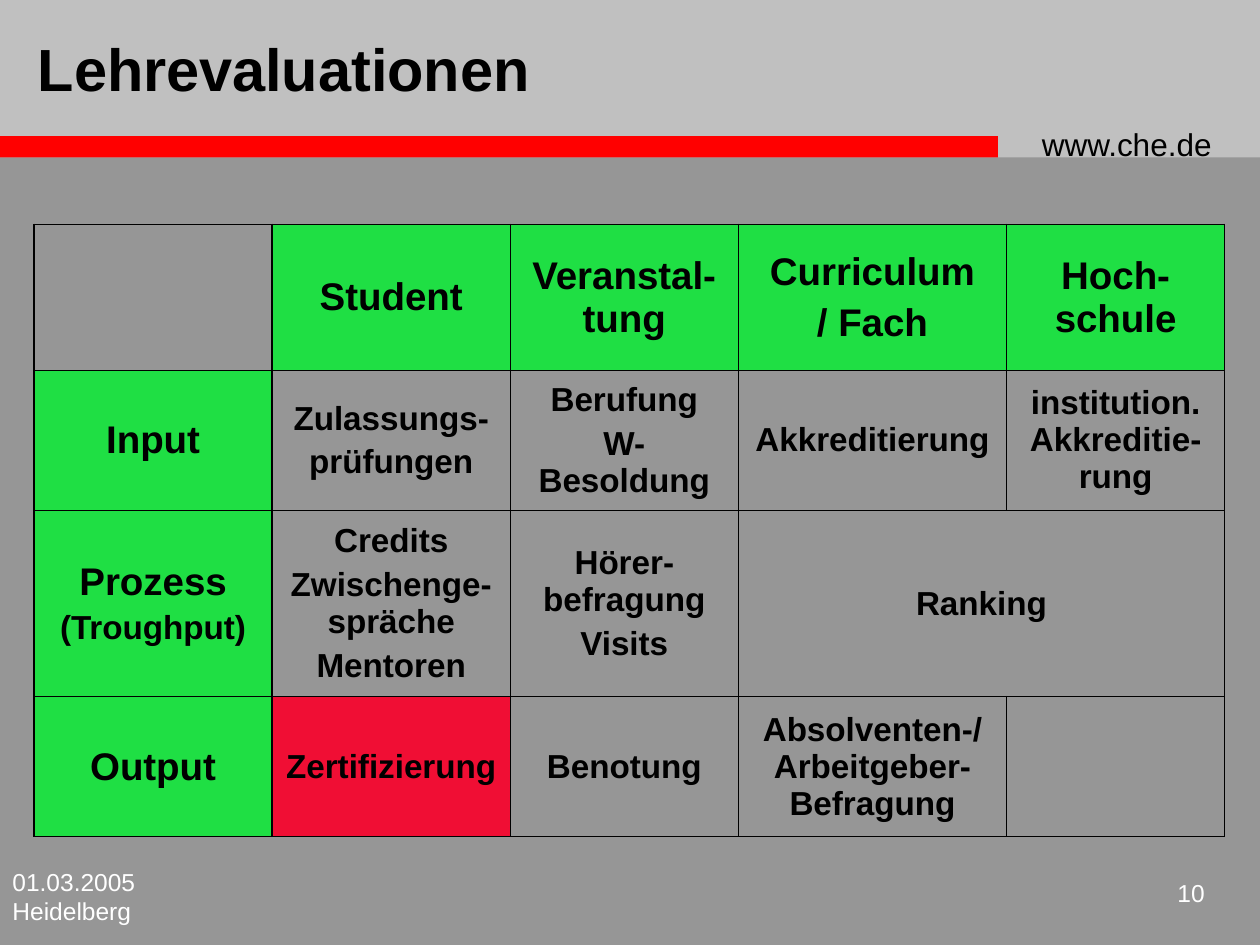
from pptx import Presentation
from pptx.dml.color import RGBColor
from pptx.enum.shapes import MSO_SHAPE as SHAPE
from pptx.enum.text import MSO_ANCHOR as ANCHOR, PP_ALIGN as ALIGN
from pptx.oxml import parse_xml
from pptx.oxml.ns import nsdecls
from pptx.util import Inches, Pt

BLACK, WHITE, GREEN, RED = "000000", "FFFFFF", "1FDF44", "F00E34"
HEAD, BODY = 22, 19
COLS = [1.89, 1.89, 1.81, 2.13, 1.73]
ROWS = [1.16, 1.11, 1.48, 1.11]
CELLS = [
    [[], ["Student"], ["Veranstal-tung"], ["Curriculum", "/ Fach"], ["Hoch-schule"]],
    [["Input"], ["Zulassungs-", "prüfungen"], ["Berufung", "W-Besoldung"],
     ["Akkreditierung"], ["institution. Akkreditie-rung"]],
    [["Prozess", "(Troughput)"], ["Credits", "Zwischenge-spräche", "Mentoren"],
     ["Hörer-befragung", "Visits"], ["Ranking"], []],
    [["Output"], ["Zertifizierung"], ["Benotung"],
     ["Absolventen-/Arbeitgeber-Befragung"], []],
]


def rgb(color):
    """Turn a hex string into a colour."""
    return RGBColor.from_string(color)


def style(p, size, color, bold=False, align=ALIGN.LEFT):
    """Format a whole paragraph."""
    p.alignment = align
    p.font.name, p.font.size, p.font.bold = "Arial", Pt(size), bold
    p.font.color.rgb = rgb(color)


def add_band(s, left, top, width, height, color):
    """Add a plain filled rectangle."""
    sp = s.shapes.add_shape(SHAPE.RECTANGLE, Inches(left), Inches(top),
                            Inches(width), Inches(height))
    sp.fill.solid()
    sp.fill.fore_color.rgb = rgb(color)
    sp.line.fill.background()
    sp.shadow.inherit = False


def add_label(s, left, top, width, height, text, size, color, align=ALIGN.LEFT):
    """Add a wrapped one-paragraph text box."""
    sp = s.shapes.add_textbox(Inches(left), Inches(top), Inches(width), Inches(height))
    tf = sp.text_frame
    tf.word_wrap = True
    tf.text = text
    style(tf.paragraphs[0], size, color, align=align)


def set_title(s, text):
    """Place the title placeholder in front of the header band."""
    sp = s.shapes.title
    sp.left, sp.top, sp.width, sp.height = Inches(0.2), 0, Inches(7.89), Inches(1.08)
    tf = sp.text_frame
    tf.text = text
    tf.vertical_anchor = ANCHOR.MIDDLE
    style(tf.paragraphs[0], 34, BLACK, bold=True)
    sp.element.getparent().append(sp.element)


def add_borders(cell):
    """Draw a thin black line on each side of a cell."""
    pr = cell._tc.get_or_add_tcPr()
    for i, side in enumerate(("lnL", "lnR", "lnT", "lnB")):
        pr.insert(i, parse_xml(
            f'<a:{side} {nsdecls("a")} w="12700"><a:solidFill>'
            f'<a:srgbClr val="{BLACK}"/></a:solidFill></a:{side}>'))


def fill_cell(cell, lines, color, sizes):
    """Write the lines of a cell and set its fill and borders."""
    cell.vertical_anchor = ANCHOR.MIDDLE
    if color:
        cell.fill.solid()
        cell.fill.fore_color.rgb = rgb(color)
    else:
        cell.fill.background()
    add_borders(cell)
    tf = cell.text_frame
    for i, (line, size) in enumerate(zip(lines, sizes)):
        p = tf.add_paragraph() if i else tf.paragraphs[0]
        p.text = line
        if i:
            p.space_before = Pt(size * 0.2)
        style(p, size, BLACK, bold=True, align=ALIGN.CENTER)


def add_matrix(s):
    """Add the table of evaluation methods by level and phase."""
    table = s.shapes.add_table(len(ROWS), len(COLS), Inches(0.27), Inches(1.78),
                               Inches(sum(COLS)), Inches(sum(ROWS))).table
    table.first_row = table.horz_banding = False
    for col, width in zip(table.columns, COLS):
        col.width = Inches(width)
    for row, height in zip(table.rows, ROWS):
        row.height = Inches(height)
    for r, row in enumerate(CELLS):
        for c, lines in enumerate(row):
            header = (r == 0) != (c == 0)
            color = GREEN if header else RED if lines == ["Zertifizierung"] else None
            sizes = [HEAD, BODY if c == 0 else HEAD] if header else [BODY] * len(lines)
            fill_cell(table.cell(r, c), lines, color, sizes)
    table.cell(2, 3).merge(table.cell(2, 4))


def main():
    """Build the slide and save it."""
    prs = Presentation()
    prs.slide_width, prs.slide_height = Inches(10), Inches(7.5)
    s = prs.slides.add_slide(prs.slide_layouts[5])
    s.background.fill.solid()
    s.background.fill.fore_color.rgb = rgb("969696")
    add_band(s, 0, 0, 10, 1.25, "C0C0C0")
    add_band(s, -0.01, 1.08, 7.93, 0.17, "FF0000")
    add_label(s, 8.17, 0.94, 1.75, 0.4, "www.che.de", 18, BLACK)
    add_label(s, 0, 6.83, 2.08, 0.5, "01.03.2005 Heidelberg", 14, WHITE)
    add_label(s, 9.08, 6.92, 0.58, 0.42, "10", 14, WHITE, ALIGN.RIGHT)
    add_matrix(s)
    set_title(s, "Lehrevaluationen")
    prs.save("out.pptx")


if __name__ == "__main__":
    main()
